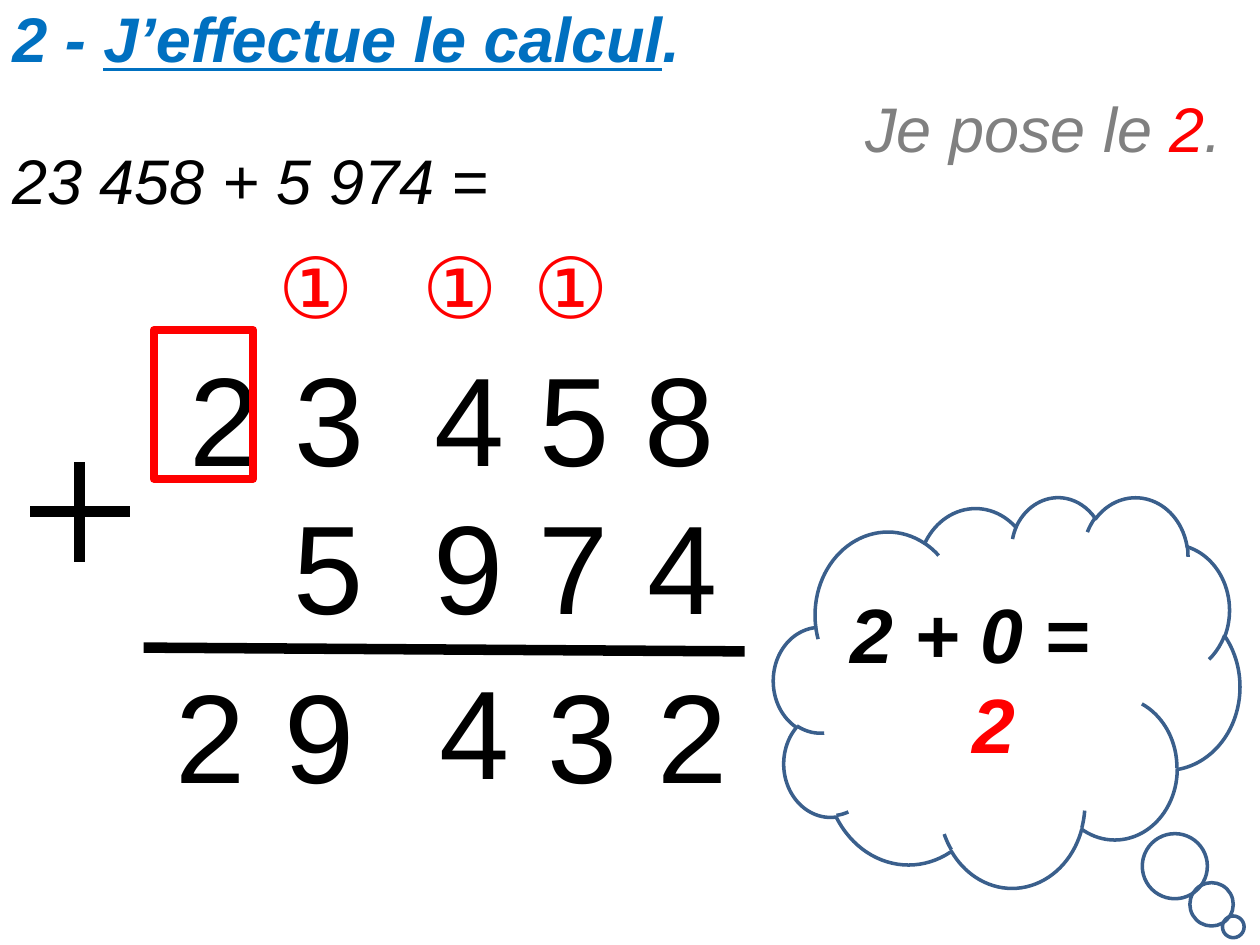
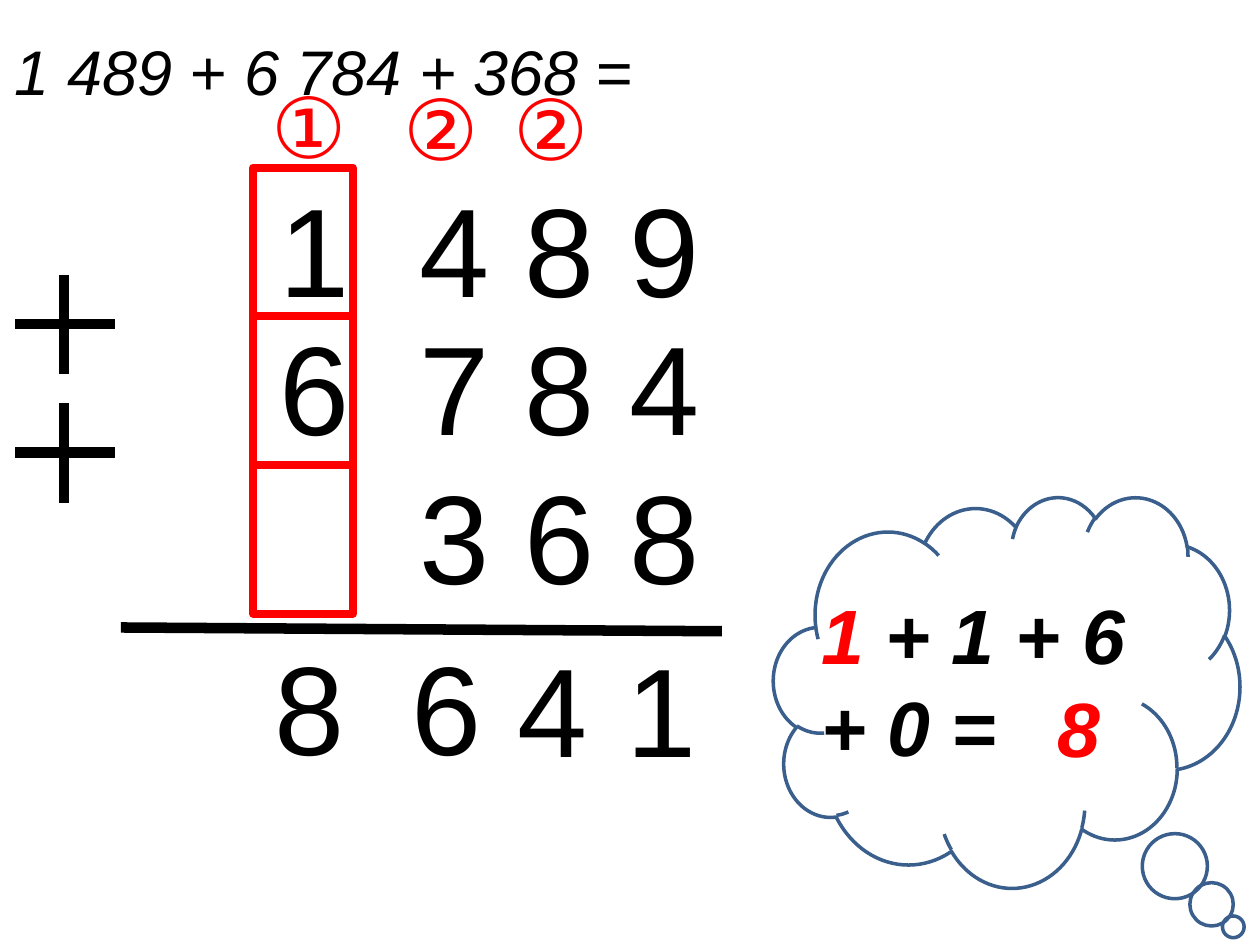
import pptx
import pptx.util
import pptx.dml.color
import pptx.enum.shapes
import pptx.enum.text
import pptx.oxml.ns
import lxml.etree

PX = 9144  # 100 px to the inch
FONT = "Arial"
RGBColor = pptx.dml.color.RGBColor
BLACK = RGBColor(0x00, 0x00, 0x00)
RED = RGBColor(0xFF, 0x00, 0x00)
BLUE = RGBColor(0x00, 0x70, 0xC0)
GREY = RGBColor(0x80, 0x80, 0x80)
CLOUD_LINE = RGBColor(0x3A, 0x5F, 0x8C)

SHAPES = pptx.enum.shapes.MSO_SHAPE
ALIGN = pptx.enum.text.PP_ALIGN
SENTENCE, THOUGHT, CARRY, DIGIT = 36, 44, 48, 72  # text sizes in points
TEXT_HEIGHT = {SENTENCE: 71, THOUGHT: 84, CARRY: 91, DIGIT: 131}
GROUP_GAP = 20  # extra points between thousands and hundreds


def emu(*lengths):
    return [pptx.util.Emu(length * PX) for length in lengths]


def add_text(slide, left, top, width, size, runs, align=ALIGN.LEFT, lines=1):
    """Each run is (text, colour, font settings); 'gap' widens its letters."""
    height = TEXT_HEIGHT[size] * lines
    frame = slide.shapes.add_textbox(*emu(left, top, width, height)).text_frame
    frame.word_wrap = True
    paragraph = frame.paragraphs[0]
    paragraph.alignment = align
    for text, colour, settings in runs:
        run = paragraph.add_run()
        run.text = text
        run.font.name = FONT
        run.font.size = pptx.util.Pt(size)
        run.font.color.rgb = colour
        run.font.bold = settings.get("bold", False)
        run.font.italic = settings.get("italic", False)
        run.font.underline = settings.get("underline", False)
        if "gap" in settings:
            run.font._element.set("spc", str(settings["gap"] * 100))


def add_line(slide, x1, y1, x2, y2):
    line = slide.shapes.add_connector(
        pptx.enum.shapes.MSO_CONNECTOR.STRAIGHT, *emu(x1, y1, x2, y2))
    line.line.color.rgb = BLACK
    line.line.width = pptx.util.Pt(6)
    lxml.etree.SubElement(line._element.spPr, pptx.oxml.ns.qn("a:effectLst"))


def add_outline(slide, preset, box, colour, width):
    outline = slide.shapes.add_shape(preset, *emu(*box))
    outline.shadow.inherit = False
    outline.fill.background()
    outline.line.color.rgb = colour
    outline.line.width = pptx.util.Pt(width)
    return outline


def add_sentence(slide, left, top, width, runs, align=ALIGN.LEFT):
    add_text(slide, left, top, width, SENTENCE,
             [(text, colour, {"italic": True, **more}) for text, colour, more in runs], align)


def add_number(slide, left, top, width, *groups):
    """A number whose thousands and hundreds groups stand further apart."""
    runs = [(groups[0], BLACK, {})]
    for group in groups[1:]:
        runs += [(" ", BLACK, {"gap": GROUP_GAP}), (group, BLACK, {})]
    add_text(slide, left, top, width, DIGIT, runs, ALIGN.RIGHT)


def add_digits(slide, places, size, colour):
    """One box per digit: (digit, left, top)."""
    for digit, left, top in places:
        add_text(slide, left, top, 87, size, [(digit, colour, {})], ALIGN.RIGHT)


def add_plus(slide, left, top, size=79):
    middle = size // 2
    add_line(slide, left, top + middle, left + size, top + middle)
    add_line(slide, left + middle, top, left + middle, top + size)


def add_sum_bar(slide, left, top):
    add_line(slide, left, top, left + 477, top + 3)


def add_column_frame(slide, left, top, rows):
    width, height = 79, 118
    for row in range(rows):
        add_outline(slide, SHAPES.RECTANGLE,
                    (left, top + row * height, width, height), RED, 4.5)


def add_thought(slide, runs, lines, result, text_left, result_left, result_top):
    """Cloud with a calculation and its result, placed from the cloud's corner."""
    left, top = 614, 394
    cloud = add_outline(slide, SHAPES.CLOUD_CALLOUT, (left, top, 370, 310), CLOUD_LINE, 2)
    cloud.adjustments[0], cloud.adjustments[1] = 0.486, 0.602
    bold = {"bold": True, "italic": True}
    add_text(slide, left + text_left, top + 67, 291, THOUGHT,
             [(text, colour, bold) for text, colour in runs], lines=lines)
    add_text(slide, left + result_left, top + result_top, 224, THOUGHT,
             [(result, RED, bold)], ALIGN.CENTER)


def build_two_numbers(slide):
    # Heading, calculation and instruction
    add_sentence(slide, 0, 107, 1000, [("23 458 + 5 974 =", BLACK, {})])
    add_sentence(slide, 0, -5, 1000, [
        ("2 - ", BLUE, {"bold": True}),
        ("J’effectue le calcul", BLUE, {"bold": True, "underline": True}),
        (".", BLUE, {"bold": True})])
    add_sentence(slide, 634, 66, 346, [
        ("Je pose le ", GREY, {}), ("2", RED, {}), (".", GREY, {})], ALIGN.RIGHT)

    # Written addition
    add_number(slide, 57, 265, 520, "2 3", "4 5 8")
    add_number(slide, 59, 383, 520, "4")
    add_number(slide, 91, 383, 402, "5", "9 7")
    add_plus(slide, 24, 367)
    add_sum_bar(slide, 114, 514)
    add_column_frame(slide, 122, 262, rows=1)
    add_digits(slide, [("①", left, 181) for left in (204, 318, 406)], CARRY, RED)
    add_digits(slide, [("2", 118, 517), ("9", 204, 517), ("4", 327, 514),
                       ("3", 413, 517), ("2", 500, 517)], DIGIT, BLACK)

    # Mental step
    add_thought(slide, [("2 + 0 =", BLACK)], 1, "2",
                text_left=51, result_left=63, result_top=138)


def build_three_numbers(slide):
    # Calculation
    add_sentence(slide, 2, 21, 553, [("1 489 + 6 784 + 368 =", BLACK, {})])

    # Written addition
    for top, groups in ((131, ("1", "4 8 9")), (241, ("6", "7 8 4")), (359, ("3 6 8",))):
        add_number(slide, 45, top, 520, *groups)
    for top in (218, 320):
        add_plus(slide, 12, top)
    add_sum_bar(slide, 96, 498)
    add_column_frame(slide, 201, 133, rows=3)
    add_digits(slide, [("①", 198, 54), ("②", 303, 56), ("②", 390, 56)], CARRY, RED)
    add_digits(slide, [("8", 196, 495), ("6", 305, 495),
                       ("4", 389, 496), ("1", 476, 496)], DIGIT, BLACK)

    # Mental step
    add_thought(slide, [("1", RED), (" + 1 + 6 + 0 =", BLACK)], 2, "8",
                text_left=28, result_left=130, result_top=141)


def main():
    deck = pptx.Presentation()
    deck.slide_width, deck.slide_height = emu(1000, 750)
    for build in (build_two_numbers, build_three_numbers):
        build(deck.slides.add_slide(deck.slide_layouts[6]))
    deck.save("out.pptx")


if __name__ == "__main__":
    main()
